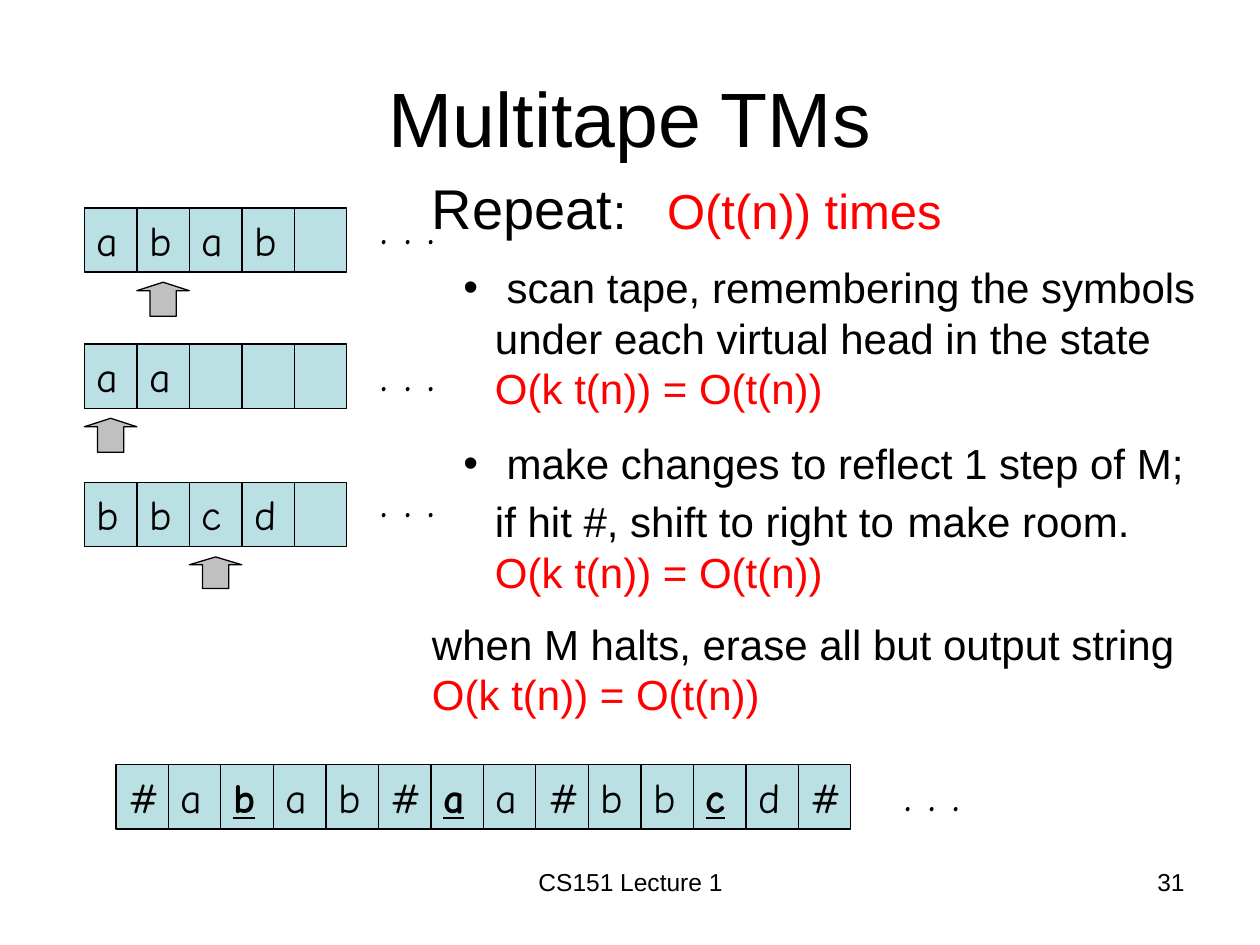
from dataclasses import dataclass

from lxml import etree
from pptx import Presentation
from pptx.dml.color import RGBColor
from pptx.enum.shapes import MSO_SHAPE
from pptx.enum.text import MSO_ANCHOR, PP_ALIGN
from pptx.oxml.ns import qn
from pptx.util import Inches, Pt

RECT, UP_ARROW = MSO_SHAPE.RECTANGLE, MSO_SHAPE.UP_ARROW
TOP, MIDDLE = MSO_ANCHOR.TOP, MSO_ANCHOR.MIDDLE
LEFT, CENTER, RIGHT = PP_ALIGN.LEFT, PP_ALIGN.CENTER, PP_ALIGN.RIGHT


@dataclass(frozen=True)
class Theme:
    black: RGBColor = RGBColor(0, 0, 0)
    red: RGBColor = RGBColor(255, 0, 0)
    cell: RGBColor = RGBColor(0xBB, 0xE0, 0xE3)
    head: RGBColor = RGBColor(0xC0, 0xC0, 0xC0)
    font: str = "Arial"
    tape_font: str = "Comic Neue"
    title: int = 44
    lead: int = 32
    large: int = 28
    body: int = 24
    small: int = 14


T = Theme()
CELL_W, CELL_H = 5 / 12, 0.51
TAPE_X = 0.67

# Tape top, symbols (a space is a blank cell), head cell, head height, dots top
TAPES = [
    (1.65, "abab ", 1, 0.27, 1.5),
    (2.73, "aa   ", 0, 0.27, 2.67),
    (3.83, "bbcd ", 2, 0.25, 3.67),
]
SINGLE_TAPE = "#abab#aa#bbcd#"
VIRTUAL_HEADS = (2, 6, 11)

# Each paragraph: bulleted?, then runs of (text, size, colour)
COST = ("O(k t(n)) = O(t(n))", T.body, T.red)
BREAK = ("\n", T.body, T.black)
STEPS = [
    (False, [("Repeat", T.lead, T.black), (":   ", T.large, T.black),
             ("O(t(n)) times", T.large, T.red)]),
    (True, [(" scan tape, remembering the symbols under each virtual head "
             "in the state", T.body, T.black), BREAK, COST]),
    (True, [(" make changes to reflect 1 step of M; if hit #, shift to right to",
             T.body, T.black), (" ", T.large, T.black),
            ("make room.", T.body, T.black), BREAK, COST]),
    (False, [("when M halts, erase all but output string", T.body, T.black),
             BREAK, COST]),
]


def add_run(p, text, size, color=T.black, font=T.font, marked=False):
    r = p.add_run()
    r.text = text
    r.font.name, r.font.size = font, Pt(size)
    r.font.color.rgb = color
    if marked:
        r.font.bold = r.font.underline = True


def space_before_half(p):
    spacing = etree.SubElement(p._p.get_or_add_pPr(), qn("a:spcBef"))
    etree.SubElement(spacing, qn("a:spcPct"), val="50000")


def add_bullet(p):
    pPr = p._p.get_or_add_pPr()
    pPr.set("marL", str(Inches(0.5)))
    pPr.set("indent", str(Inches(-0.25)))
    pPr.set("lvl", "1")
    etree.SubElement(pPr, qn("a:buFont"), typeface=T.font)
    etree.SubElement(pPr, qn("a:buChar"), char="•")


def add_text_box(slide, x, y, w, h):
    sp = slide.shapes.add_textbox(Inches(x), Inches(y), Inches(w), Inches(h))
    sp.text_frame.word_wrap = True
    return sp.text_frame


def add_label(slide, x, y, w, text, align):
    p = add_text_box(slide, x, y, w, 0.52).paragraphs[0]
    p.alignment = align
    add_run(p, text, T.small)


def add_dots(slide, x, y, w):
    p = add_text_box(slide, x, y, w, 0.57).paragraphs[0]
    space_before_half(p)
    add_run(p, ". . .", T.large, font=T.tape_font)


def add_outlined(slide, kind, x, y, h, fill):
    sp = slide.shapes.add_shape(kind, Inches(x), Inches(y), Inches(CELL_W), Inches(h))
    sp.shadow.inherit = False
    sp.fill.solid()
    sp.fill.fore_color.rgb = fill
    sp.line.color.rgb = T.black
    sp.line.width = Pt(0.75)
    return sp


def add_tape(slide, x, y, symbols, marked=()):
    for i, symbol in enumerate(symbols):
        sp = add_outlined(slide, RECT, x + i * CELL_W, y, CELL_H, T.cell)
        if symbol == " ":
            continue
        tf = sp.text_frame
        tf.vertical_anchor = TOP
        p = tf.paragraphs[0]
        p.alignment = LEFT
        space_before_half(p)
        add_run(p, symbol, T.body, font=T.tape_font, marked=i in marked)


def add_head(slide, cell, y, h):
    sp = add_outlined(slide, UP_ARROW, TAPE_X + cell * CELL_W, y, h, T.head)
    sp.adjustments[0], sp.adjustments[1] = 0.5, 0.25


def add_title(slide, text):
    sp = slide.shapes.title
    sp.left, sp.top, sp.width, sp.height = map(Inches, (0.5, 0.3, 9, 1.25))
    sp.text_frame.vertical_anchor = MIDDLE
    p = sp.text_frame.paragraphs[0]
    p.alignment = CENTER
    add_run(p, text, T.title)


def add_steps(slide):
    tf = add_text_box(slide, 3.33, 1.33, 6.42, 4.54)
    for i, (bulleted, runs) in enumerate(STEPS):
        p = tf.add_paragraph() if i else tf.paragraphs[0]
        space_before_half(p)
        if bulleted:
            add_bullet(p)
        for run in runs:
            if run is BREAK:
                p.add_line_break()
            else:
                add_run(p, *run)


def main():
    prs = Presentation()
    prs.slide_width, prs.slide_height = Inches(10), Inches(7.5)
    slide = prs.slides.add_slide(prs.slide_layouts[5])
    add_title(slide, "Multitape TMs")

    # The separate tapes, each with its head
    for y, symbols, head, head_h, dots_y in TAPES:
        add_tape(slide, TAPE_X, y, symbols)
        add_head(slide, head, y + CELL_H + 0.08, head_h)
        add_dots(slide, 2.92, dots_y, 1.58)

    # The single tape that simulates them
    add_tape(slide, 0.92, 6.07, SINGLE_TAPE, VIRTUAL_HEADS)
    add_dots(slide, 7.08, 6, 0.92)

    # Simulation steps and footer
    add_steps(slide)
    add_label(slide, 3.42, 6.83, 3.17, "CS151 Lecture 1", CENTER)
    add_label(slide, 7.17, 6.83, 2.33, "31", RIGHT)
    prs.save("out.pptx")


if __name__ == "__main__":
    main()
